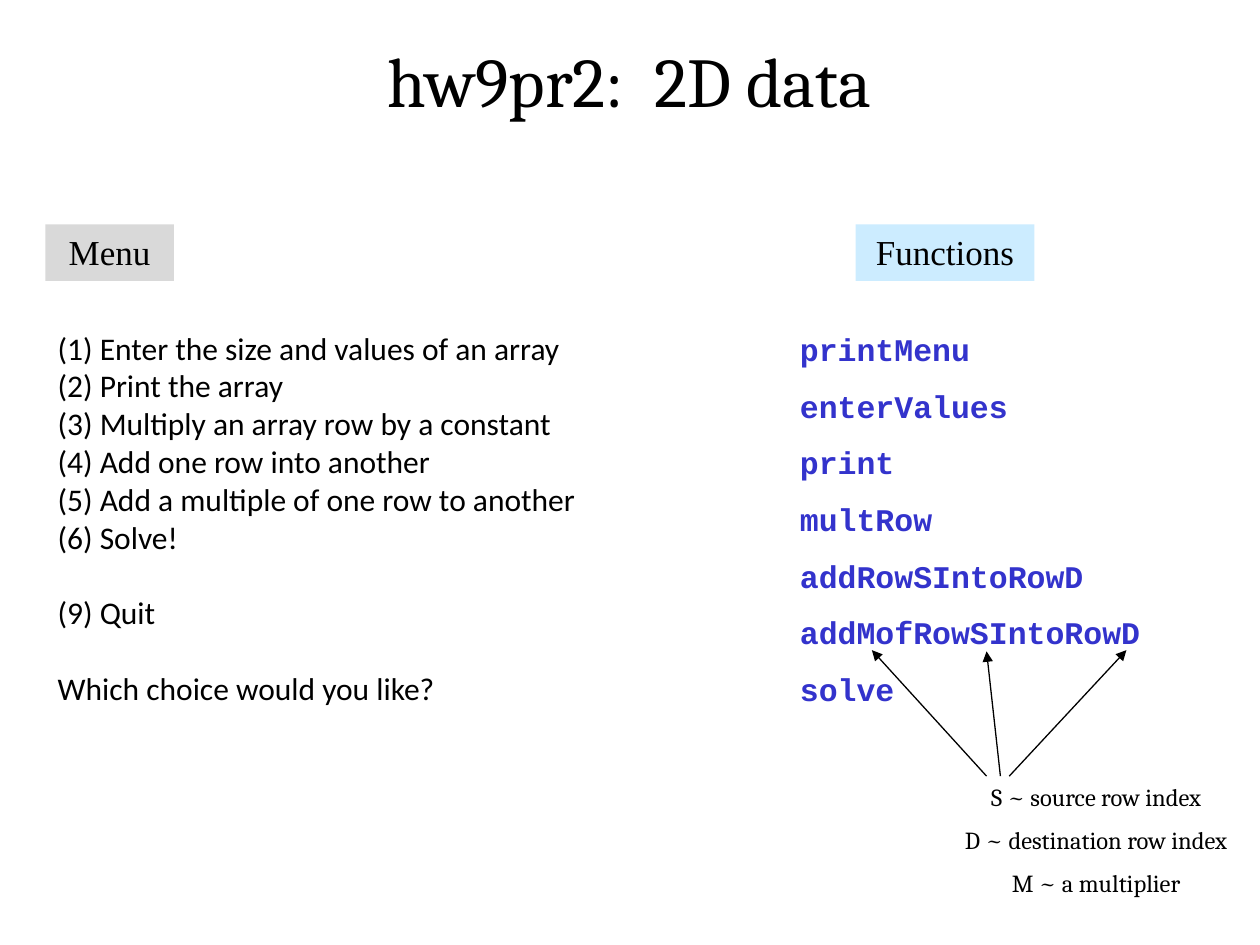
"""Builds the slide "hw9pr2: 2D data" with its menu, functions and row-index notes."""
from dataclasses import dataclass

from lxml import etree
from pptx import Presentation
from pptx import util as u
from pptx.dml.color import RGBColor
from pptx.enum import shapes, text
from pptx.oxml.ns import qn

COLORS = {"ink": "000000", "code": "3333CC", "menu": "D9D9D9", "functions": "CCECFF"}
CENTER, LEFT = text.PP_ALIGN.CENTER, text.PP_ALIGN.LEFT


@dataclass
class Block:
    """Lines of text in one format, on an optional fill."""
    box: tuple[float, float, float, float]
    lines: list[str]
    font: str
    size: float
    color: str = "ink"
    fill: str = ""
    bold: bool = False
    align: text.PP_ALIGN = CENTER
    wrap: bool = True
    spacing: float = 1.0
    gap: float = 0
    gap_lines: tuple[int, ...] = ()


@dataclass
class Pointer:
    """An arrow from the notes to a letter of a function name."""
    start: tuple[float, float]
    tip: tuple[float, float]


BLOCKS = [
    Block((0.83, 0.25, 8.33, 0.77), ["hw9pr2:  2D data"], "Cambria", 40),
    Block((0.36, 1.78, 1.02, 0.45), ["Menu"], "Times New Roman", 20, fill="menu"),
    Block((6.79, 1.78, 1.42, 0.45), ["Functions"], "Times New Roman", 20, fill="functions"),
    Block((6.25, 2.42, 2.9, 3.26),
          ["printMenu", "enterValues", "print", "multRow", "addRowSIntoRowD",
           "addMofRowSIntoRowD", "solve"],
          "Courier New", 18, color="code", bold=True, align=LEFT, wrap=False, spacing=1.5),
    Block((0.36, 2.56, 4.36, 3.13),
          ["(1) Enter the size and values of an array", "(2) Print the array",
           "(3) Multiply an array row by a constant", "(4) Add one row into another",
           "(5) Add a multiple of one row to another", "(6) Solve!", "(9) Quit",
           "Which choice would you like?"],
          "Calibri", 18, align=LEFT, wrap=False, gap=21.6, gap_lines=(6, 7)),
    Block((7.5, 6.16, 2.4, 1.04),
          ["S ~ source row index", "D ~ destination row index", "M ~ a multiplier"],
          "Cambria", 14, gap=7.6, gap_lines=(1, 2)),
]
POINTERS = [
    Pointer((7.94, 6.16), (7.83, 5.17)),
    Pointer((8.01, 6.16), (8.94, 5.16)),
    Pointer((7.83, 6.16), (6.92, 5.16)),
]


def rgb(name: str) -> RGBColor:
    """Return the named colour."""
    return RGBColor.from_string(COLORS[name])


def draw_block(slide, block: Block) -> None:
    """Draw a text block, as a rectangle when it has a fill."""
    box = [u.Inches(length) for length in block.box]
    if block.fill:
        panel = slide.shapes.add_shape(shapes.MSO_SHAPE.RECTANGLE, *box)
        panel.shadow.inherit = False
        panel.fill.solid()
        panel.fill.fore_color.rgb = rgb(block.fill)
        panel.line.fill.background()
    else:
        panel = slide.shapes.add_textbox(*box)
    frame = panel.text_frame
    frame.word_wrap = block.wrap
    frame.auto_size = text.MSO_AUTO_SIZE.SHAPE_TO_FIT_TEXT
    frame.vertical_anchor = text.MSO_ANCHOR.TOP
    frame.text = "\n".join(block.lines)
    font_format = {"name": block.font, "size": u.Pt(block.size), "bold": block.bold}
    for index, line in enumerate(frame.paragraphs):
        line.alignment = block.align
        line.line_spacing = block.spacing
        if index in block.gap_lines:
            line.space_before = u.Pt(block.gap)
        font = line.runs[0].font
        for attribute, value in font_format.items():
            setattr(font, attribute, value)
        font.color.rgb = rgb(block.color)


def draw_pointer(slide, pointer: Pointer) -> None:
    """Draw a thin arrow with a triangle at its tip."""
    ends = [u.Inches(length) for length in (*pointer.start, *pointer.tip)]
    arrow = slide.shapes.add_connector(shapes.MSO_CONNECTOR.STRAIGHT, *ends)
    arrow.line.color.rgb = rgb("ink")
    arrow.line.width = u.Pt(0.75)
    properties = arrow.line._get_or_add_ln()
    etree.SubElement(properties, qn("a:tailEnd"), type="triangle")
    etree.SubElement(properties.getparent(), qn("a:effectLst"))


def main() -> None:
    """Build and save the slide."""
    deck = Presentation()
    deck.slide_width, deck.slide_height = u.Inches(10), u.Inches(7.5)
    slide = deck.slides.add_slide(deck.slide_layouts[6])
    for block in BLOCKS:
        draw_block(slide, block)
    for pointer in POINTERS:
        draw_pointer(slide, pointer)
    deck.save("out.pptx")


if __name__ == "__main__":
    main()
